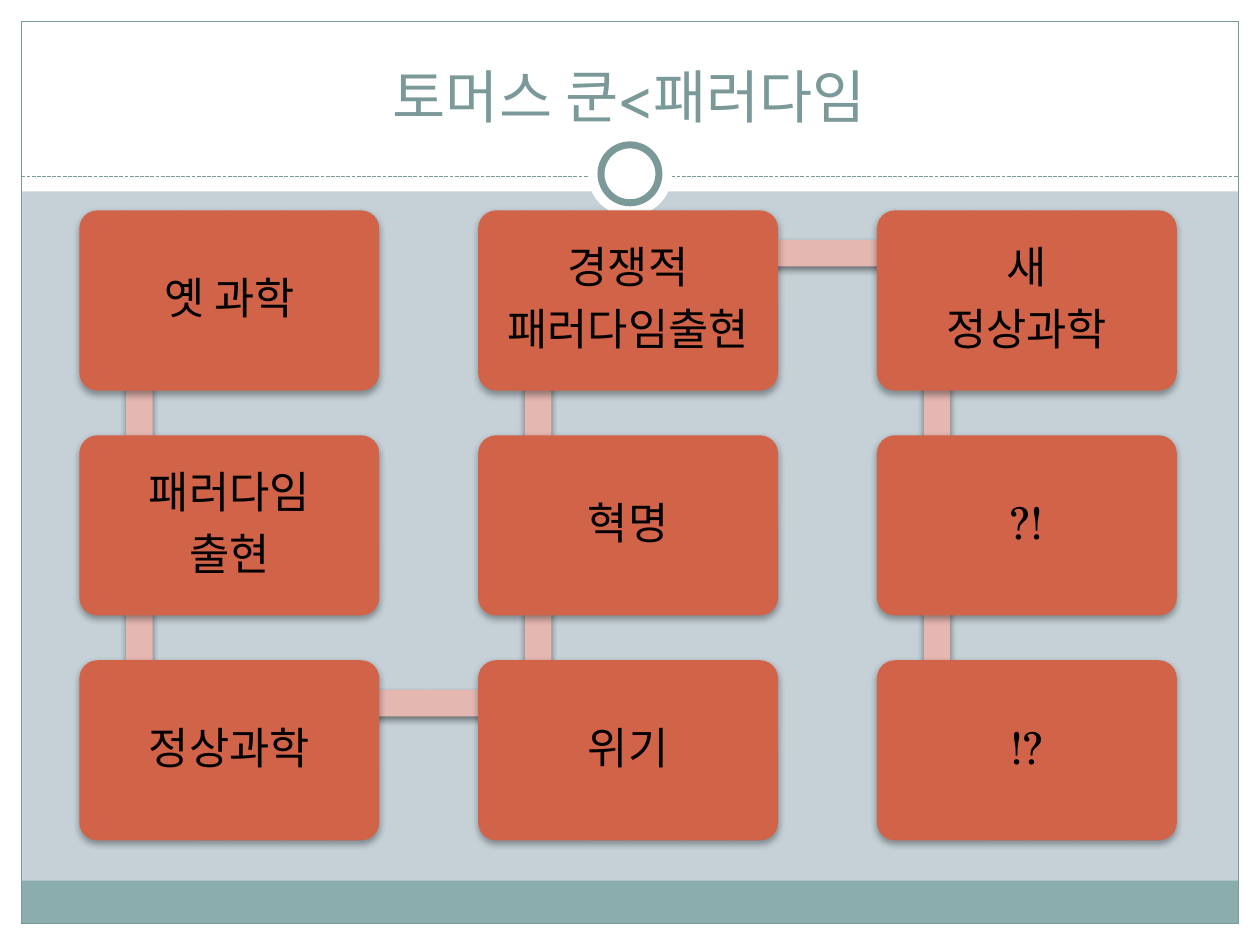
import pptx
import pptx.util
import pptx.dml.color
import pptx.enum.dml
import pptx.enum.shapes
import pptx.enum.text
import pptx.oxml
import pptx.oxml.ns

Inches = pptx.util.Inches
Pt = pptx.util.Pt
SHAPES = pptx.enum.shapes.MSO_SHAPE
ANCHOR = pptx.enum.text.MSO_ANCHOR

FONT = "TeX Gyre Schola"
WHITE, TEAL, FOOTER, BACKDROP = "FFFFFF", "7C999A", "8CADAE", "C5D1D7"
CARD, BAR, BLACK = "D16349", "E5B7B1", "000000"

COLUMNS = [
    [["옛 과학"], ["패러다임", "출현"], ["정상과학"]],
    [["경쟁적", "패러다임출현"], ["혁명"], ["위기"]],
    [["새", "정상과학"], ["?!"], ["!?"]],
]


def color(hex_value):
    return pptx.dml.color.RGBColor.from_string(hex_value)


def set_values(target, values):
    for name, value in values.items():
        setattr(target, name, value)


def add_effects(shape, content=""):
    shape._element.spPr.append(pptx.oxml.parse_xml(
        f'<a:effectLst {pptx.oxml.ns.nsdecls("a")}>{content}</a:effectLst>'))


def add_shape(page, kind, box, fill=None, line=None, weight=0.75):
    shape = page.shapes.add_shape(kind, *[Inches(length) for length in box])
    shape.shadow.inherit = False
    if fill:
        shape.fill.solid()
        shape.fill.fore_color.rgb = color(fill)
    else:
        shape.fill.background()
    if line:
        shape.line.color.rgb = color(line)
        shape.line.width = Pt(weight)
    else:
        shape.line.fill.background()
    return shape


def add_shadow(shape, opacity):
    # Replace the empty effect list with a soft shadow straight below
    properties = shape._element.spPr
    properties.remove(properties.find(pptx.oxml.ns.qn("a:effectLst")))
    add_effects(shape, (
        f'<a:outerShdw blurRad="{Pt(4)}" dist="{Pt(2)}" dir="5400000" rotWithShape="0">'
        f'<a:srgbClr val="{BLACK}"><a:alpha val="{opacity * 1000}"/></a:srgbClr>'
        '</a:outerShdw>'))


def write_text(shape, lines, size, text_color, frame_format, para_format):
    frame = shape.text_frame
    set_values(frame, {"word_wrap": True, **frame_format})
    for index, line in enumerate(lines):
        para = frame.add_paragraph() if index else frame.paragraphs[0]
        set_values(para, {"alignment": pptx.enum.text.PP_ALIGN.CENTER, **para_format})
        span = para.add_run()
        span.text = line
        set_values(span.font, {"name": FONT, "size": Pt(size)})
        span.font.color.rgb = color(text_color)


def add_frame(page, box):
    left, top, width, height = box
    margin = 0.17
    right, bottom = left + width - margin, top + height - margin

    # White margins and header band
    for band in [(left, bottom, width, margin), (left, top, width, 1.52),
                 (left, top, margin, height), (right, top, margin, height)]:
        add_shape(page, SHAPES.RECTANGLE, band, WHITE)

    # Footer band and outline
    inner_width = width - 2 * margin
    add_shape(page, SHAPES.RECTANGLE, (left + margin, bottom - 0.34, inner_width, 0.34), FOOTER)
    add_shape(page, SHAPES.RECTANGLE,
              (left + margin, top + margin, inner_width, height - 2 * margin), line=TEAL)

    # Dashed divider
    divider_y = Inches(top + 1.4)
    divider = page.shapes.add_connector(
        pptx.enum.shapes.MSO_CONNECTOR.STRAIGHT,
        Inches(left + margin), divider_y, Inches(right), divider_y)
    set_values(divider.line, {"width": Pt(0.75),
                              "dash_style": pptx.enum.dml.MSO_LINE.SQUARE_DOT})
    divider.line.color.rgb = color(TEAL)
    add_effects(divider)

    # Ring on the divider
    center_x, center_y = left + width / 2, top + 1.38
    for diameter, line in [(0.67, None), (0.46, TEAL)]:
        add_shape(page, SHAPES.OVAL,
                  (center_x - diameter / 2, center_y - diameter / 2, diameter, diameter),
                  WHITE, line, 4)


def add_title(page, box, title):
    text_box = page.shapes.add_textbox(*[Inches(length) for length in box])
    write_text(text_box, [title], 33, TEAL, {"vertical_anchor": ANCHOR.BOTTOM}, {})


def add_bar(page, start, end):
    # Bars run between fixed points inside neighbouring cards
    thickness = 0.21
    (start_x, start_y), (end_x, end_y) = start, end
    length = abs(end_x - start_x) + abs(end_y - start_y)
    center_x, center_y = (start_x + end_x) / 2, (start_y + end_y) / 2
    bar = add_shape(page, SHAPES.RECTANGLE,
                    (center_x - length / 2, center_y - thickness / 2, length, thickness), BAR)
    if start_x == end_x:
        bar.rotation = 90 if end_y > start_y else 270
    add_shadow(bar, 45)


def add_card(page, box, lines):
    card = add_shape(page, SHAPES.ROUNDED_RECTANGLE, box, CARD)
    card.adjustments[0] = 0.1
    add_shadow(card, 35)
    sides = ["left", "right", "top", "bottom"]
    frame_format = {f"margin_{side}": Inches(0.1) for side in sides}
    frame_format["vertical_anchor"] = ANCHOR.MIDDLE
    write_text(card, lines, 25, BLACK, frame_format,
               {"line_spacing": 0.9, "space_after": Pt(8.75)})


def add_snake(page, box, columns):
    left, top, width, height = box
    card_width, card_height = 2.38, 1.43
    step_x = (width - card_width) / (len(columns) - 1)
    step_y = (height - card_height) / (len(columns[0]) - 1)

    # Down the first column, up the second, down the third
    cards = []
    for column, texts in enumerate(columns):
        rows = list(enumerate(texts))
        for row, lines in rows[::-1] if column % 2 else rows:
            cards.append((left + column * step_x, top + row * step_y, lines))

    joints = [(x + 0.2 * card_width, y + 0.24 + 0.1) for x, y, lines in cards]
    for index, (x, y, lines) in enumerate(cards):
        if index + 1 < len(cards):
            add_bar(page, joints[index], joints[index + 1])
        add_card(page, (x, y, card_width, card_height), lines)


def main():
    deck = pptx.Presentation()
    set_values(deck, {"slide_width": Inches(10), "slide_height": Inches(7.5)})
    page = deck.slides.add_slide(deck.slide_layouts[6])
    page.background.fill.solid()
    page.background.fill.fore_color.rgb = color(BACKDROP)

    add_frame(page, (0, 0, 10, 7.5))
    add_title(page, (0.33, 0.25, 9.33, 0.83), "토머스 쿤<패러다임")
    add_snake(page, (0.63, 1.67, 8.71, 5), COLUMNS)
    deck.save("out.pptx")


if __name__ == "__main__":
    main()
